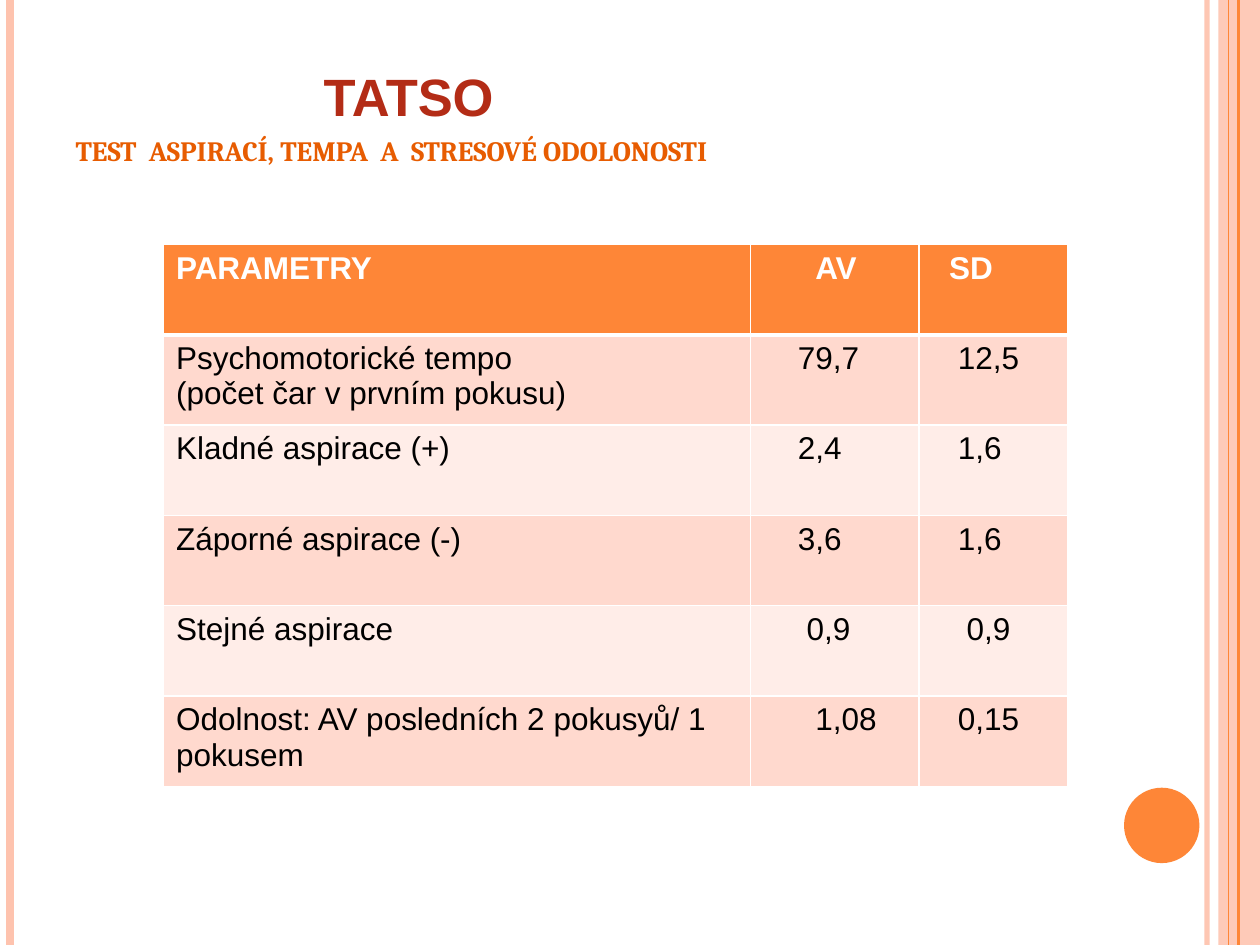
"""Build the TATSO results slide with its parameter table."""
import pptx
import pptx.dml.color
import pptx.enum.shapes
import pptx.enum.text
import pptx.oxml
import pptx.oxml.ns
import pptx.util

Cm = pptx.util.Cm
Pt = pptx.util.Pt
RGB = pptx.dml.color.RGBColor
Kind = pptx.enum.shapes.MSO_SHAPE
qn = pptx.oxml.ns.qn
NS = pptx.oxml.ns.nsdecls("a")

WHITE = RGB(0xFF, 0xFF, 0xFF)
BLACK = RGB(0, 0, 0)
ORANGE = RGB(0xFE, 0x86, 0x37)
PEACH = RGB(0xFE, 0xC3, 0xAE)
ROSE = RGB(0xFF, 0xD9, 0xCE)
PALE = RGB(0xFF, 0xED, 0xE8)
RED = RGB(0xB3, 0x2C, 0x16)
AMBER = RGB(0xE7, 0x5C, 0x01)

HIGH = 19.05
PAD = 0.25
SPACE = 0.176

LINES = [
    (24.33, PEACH, 3, 93),
    (0.2, PEACH, 4.5, 100),
    (24.97, ORANGE, 1.5, 100),
    (24.77, ORANGE, 0.75, 100),
]
COLS = [11.83, 3.4, 3]
ROWS = [
    [("PARAMETRY", 0), ("AV", 6), ("SD", 2)],
    [("Psychomotorické tempo\n(počet čar v prvním pokusu)", 0), ("79,7", 4), ("12,5", 3)],
    [("Kladné aspirace (+)", 0), ("2,4", 4), ("1,6", 3)],
    [("Záporné aspirace (-)", 0), ("3,6", 4), ("1,6", 3)],
    [("Stejné aspirace", 0), ("0,9", 5), ("0,9", 4)],
    [("Odolnost: AV posledních 2 pokusyů/ 1 pokusem", 0), ("1,08", 6), ("0,15", 3)],
]


class Deck:
    """Holds the style and the current slide."""

    def __init__(self, slide):
        self.slide = slide
        self.head = {"name": "Arial", "size": Pt(18), "bold": True}
        self.cell = {"name": "Arial", "size": Pt(18), "bold": False}

    def style(self, font, form, color):
        for key, val in form.items():
            setattr(font, key, val)
        font.color.rgb = color

    def fade(self, fill, alpha):
        if alpha < 100:
            tag = pptx.oxml.parse_xml(f'<a:alpha {NS} val="{alpha * 1000}"/>')
            fill.find(".//" + qn("a:srgbClr")).append(tag)

    def line(self, left, color, width, alpha):
        line = self.slide.shapes.add_connector(
            pptx.enum.shapes.MSO_CONNECTOR.STRAIGHT, Cm(left), 0, Cm(left), Cm(HIGH))
        line.line.color.rgb = color
        line.line.width = Pt(width)
        props = line._element.spPr
        self.fade(props, alpha)
        props.append(pptx.oxml.parse_xml(f"<a:effectLst {NS}/>"))

    def shape(self, kind, box, color, alpha=100):
        shape = self.slide.shapes.add_shape(kind, *map(Cm, box))
        shape.shadow.inherit = False
        shape.fill.solid()
        shape.fill.fore_color.rgb = color
        shape.line.fill.background()
        self.fade(shape._element.spPr, alpha)

    def title(self, box, parts):
        title = self.slide.shapes.title
        title.left, title.top, title.width, title.height = map(Cm, box)
        frame = title.text_frame
        form = {"word_wrap": True, "auto_size": pptx.enum.text.MSO_AUTO_SIZE.NONE,
                "vertical_anchor": pptx.enum.text.MSO_ANCHOR.BOTTOM}
        for key, val in form.items():
            setattr(frame, key, val)
        frame.text = "\n".join(part[0] for part in parts)
        for para, (_, name, size, color, indent) in zip(frame.paragraphs, parts):
            para.alignment = pptx.enum.text.PP_ALIGN.LEFT
            para.line_spacing = 1.0
            para.space_before = Pt(0)
            props = para._p.get_or_add_pPr()
            props.set("marL", str(Cm(indent)))
            props.set("indent", "0")
            run = para.runs[0]
            self.style(run.font, {"name": name, "size": Pt(size), "bold": True}, color)
            run._r.get_or_add_rPr().set("cap", "small")

    def edge(self, cell, side, width):
        cell._tc.get_or_add_tcPr().append(pptx.oxml.parse_xml(
            f'<a:ln{side} {NS} w="{Pt(width)}"><a:solidFill>'
            f'<a:srgbClr val="{WHITE}"/></a:solidFill></a:ln{side}>'))

    def table(self, left, top, cols, tall, rows):
        table = self.slide.shapes.add_table(
            len(rows), len(cols), Cm(left), Cm(top),
            Cm(sum(cols)), Cm(tall * len(rows))).table
        for col, width in zip(table.columns, cols):
            col.width = Cm(width)
        for r, row in enumerate(rows):
            table.rows[r].height = Cm(tall)
            form, ink = (self.cell, BLACK) if r else (self.head, WHITE)
            back = (PALE if r % 2 == 0 else ROSE) if r else ORANGE
            for c, (text, shift) in enumerate(row):
                cell = table.cell(r, c)
                for side in "LRTB":
                    thick = (r, side) in ((0, "B"), (1, "T"))
                    self.edge(cell, side, 3 if thick else 1)
                cell.fill.solid()
                cell.fill.fore_color.rgb = back
                cell.margin_left = Cm(PAD + shift * SPACE)
                cell.text = text
                for para in cell.text_frame.paragraphs:
                    self.style(para.runs[0].font, form, ink)


def main():
    prs = pptx.Presentation()
    prs.slide_width, prs.slide_height = Cm(25.4), Cm(HIGH)
    deck = Deck(prs.slides.add_slide(prs.slide_layouts[5]))
    deck.shape(Kind.RECTANGLE, (24.56, 0, 0.84, HIGH), PEACH, 87)
    for line in LINES:
        deck.line(*line)
    deck.shape(Kind.OVAL, (22.66, 15.88, 1.52, 1.52), ORANGE)
    deck.title((1.27, 0.76, 20.75, 2.77), [
        ("TATSO", "Arial", 30, RED, 5),
        ("test  aspirací, tempa  a  stresové odolonosti", "Cambria", 20, AMBER, 0),
    ])
    deck.table(3.3, 4.93, COLS, 1.82, ROWS)
    prs.save("out.pptx")


if __name__ == "__main__":
    main()
